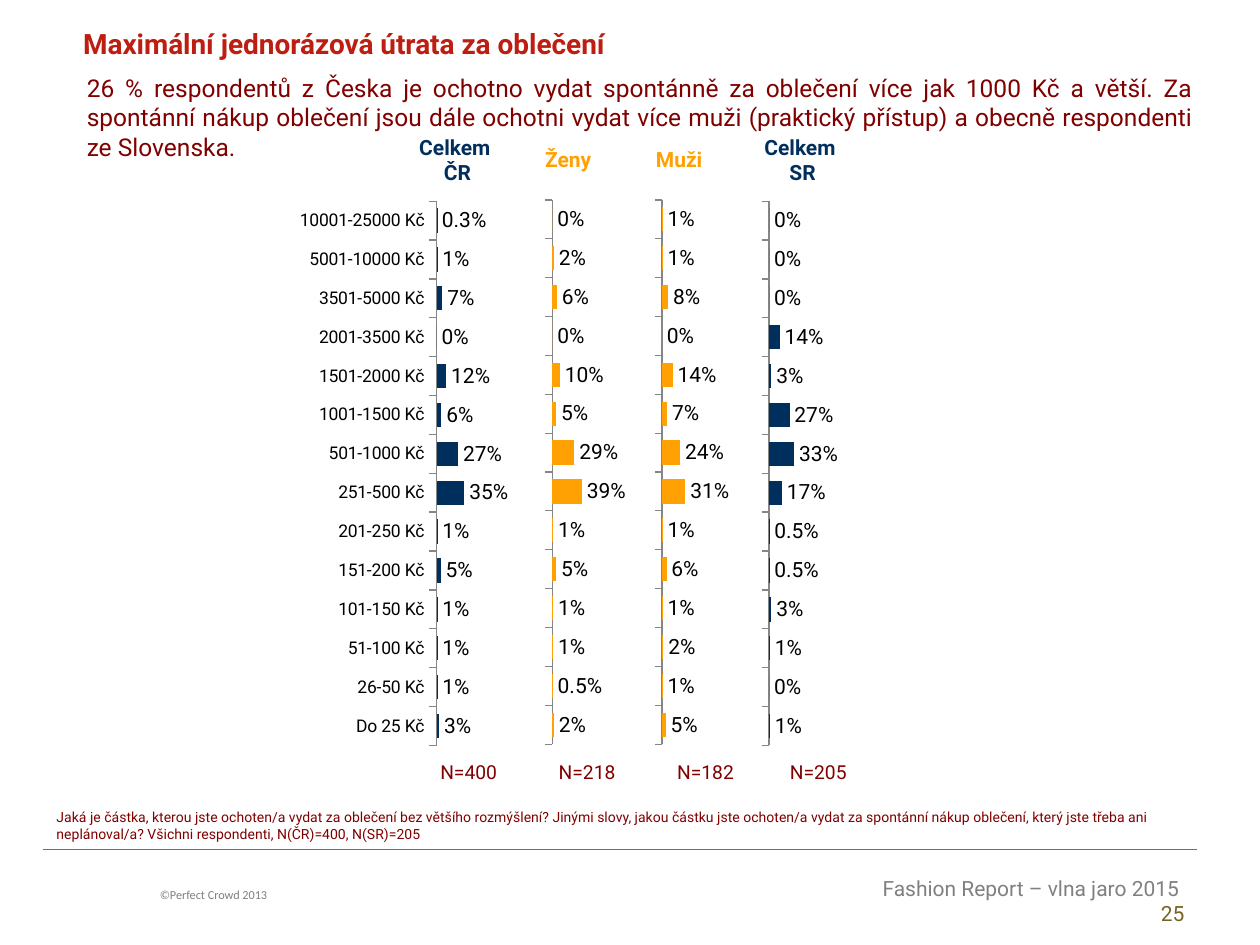
import dataclasses

import lxml.etree
import pptx
import pptx.chart.data
import pptx.dml.color
import pptx.enum.chart
import pptx.enum.shapes
import pptx.enum.text
import pptx.oxml
import pptx.oxml.ns
import pptx.util

Inches = pptx.util.Inches
Align = pptx.enum.text.PP_ALIGN
Anchor = pptx.enum.text.MSO_ANCHOR
qn = pptx.oxml.ns.qn


@dataclasses.dataclass(frozen=True)
class Theme:
    font: str = "Roboto"
    copyright_font: str = "Calibri"
    navy: str = "002F5E"
    orange: str = "FFA102"
    maroon: str = "800000"
    red: str = "BE1E11"
    rule: str = "BF4C48"
    axis: str = "868686"
    grey: str = "808080"
    olive: str = "756522"
    black: str = "000000"
    title_size: float = 16
    lead_size: float = 14
    base_size: float = 12
    count_size: float = 11
    category_size: float = 10
    note_size: float = 8
    copyright_size: float = 7


def apply(target, values):
    for name, value in values.items():
        setattr(target, name, value)


def rgb(color):
    return pptx.dml.color.RGBColor.from_string(color)


class SurveySlide:
    def __init__(self, presentation, theme):
        self.theme = theme
        self.slide = presentation.slides.add_slide(presentation.slide_layouts[5])
        self.shapes = self.slide.shapes

    def style(self, font, size, color, bold=False, name=None):
        apply(font, {"name": name or self.theme.font, "size": pptx.util.Pt(size), "bold": bold})
        font.color.rgb = rgb(color)

    def fill_frame(self, frame, text, size, color, align=Align.LEFT, **font):
        apply(frame, {"text": text, "word_wrap": True, "vertical_anchor": Anchor.TOP,
                      "auto_size": pptx.enum.text.MSO_AUTO_SIZE.NONE})
        for paragraph in frame.paragraphs:
            paragraph.alignment = align
            for run in paragraph.runs:
                self.style(run.font, size, color, **font)

    def title(self, box, text):
        headline = self.shapes.title
        apply(headline, dict(zip(("left", "top", "width", "height"), map(Inches, box))))
        self.fill_frame(headline.text_frame, text, self.theme.title_size, self.theme.red, bold=True)

    def text(self, box, text, size, color, **options):
        frame = self.shapes.add_textbox(*map(Inches, box)).text_frame
        self.fill_frame(frame, text, size, color, **options)
        return frame

    def rule(self, left, right, y):
        line = self.shapes.add_connector(pptx.enum.shapes.MSO_CONNECTOR.STRAIGHT,
                                         Inches(left), Inches(y), Inches(right), Inches(y))
        line.line.color.rgb = rgb(self.theme.rule)
        line.line.width = pptx.util.Pt(0.75)
        lxml.etree.SubElement(line._element.spPr, qn("a:effectLst"))

    def row(self, box, widths, entries, size, bold=False):
        """Add a one-row table; entries are (text, color) pairs."""
        table = self.shapes.add_table(1, len(entries), *map(Inches, box)).table
        apply(table, {"first_row": False, "horz_banding": False})
        table.rows[0].height = Inches(box[3])
        for column, width, cell, (text, color) in zip(table.columns, widths, table.rows[0].cells, entries):
            column.width = Inches(width)
            cell.fill.background()
            apply(cell, {"text": text, "vertical_anchor": Anchor.MIDDLE, "margin_left": Inches(0.01),
                         "margin_right": Inches(0.01), "margin_top": Inches(0.01), "margin_bottom": 0})
            for paragraph in cell.text_frame.paragraphs:
                paragraph.alignment = Align.CENTER
                self.style(paragraph.runs[0].font, size, color, bold)

    def bars(self, box, plot_box, categories, values, color, show_categories=False):
        data = pptx.chart.data.CategoryChartData()
        data.categories = categories
        data.add_series("Series 1", values)
        chart = self.shapes.add_chart(pptx.enum.chart.XL_CHART_TYPE.BAR_CLUSTERED,
                                      *map(Inches, box), data).chart
        apply(chart, {"has_title": False, "has_legend": False})
        self.style(chart.font, self.theme.base_size, self.theme.black)
        self.place_plot(chart, plot_box)

        apply(chart.value_axis, {"minimum_scale": 0, "maximum_scale": 100,
                                 "has_major_gridlines": False, "visible": False})
        axis = chart.category_axis
        marks, labels = pptx.enum.chart.XL_TICK_MARK, pptx.enum.chart.XL_TICK_LABEL_POSITION
        apply(axis, {"major_tick_mark": marks.OUTSIDE, "minor_tick_mark": marks.NONE,
                     "has_major_gridlines": False,
                     "tick_label_position": labels.LOW if show_categories else labels.NONE})
        axis.format.line.color.rgb = rgb(self.theme.axis)
        self.style(axis.tick_labels.font, self.theme.category_size, self.theme.black)

        plot = chart.plots[0]
        apply(plot, {"gap_width": 60, "vary_by_categories": False, "has_data_labels": True})
        apply(plot.data_labels, {"show_value": True, "number_format_is_linked": False,
                                 "number_format": '[=0]0"%";[<1]0.0"%";#,##0"%"',
                                 "position": pptx.enum.chart.XL_LABEL_POSITION.OUTSIDE_END})
        self.style(plot.data_labels.font, self.theme.base_size, self.theme.black)
        fill = plot.series[0].format.fill
        fill.solid()
        fill.fore_color.rgb = rgb(color)

    def place_plot(self, chart, plot_box):
        """Fix the inner plot area as fractions of the chart and clear the background."""
        chart_node = chart.element.find(qn("c:chart"))
        background = pptx.oxml.parse_xml(
            f'<c:spPr {pptx.oxml.ns.nsdecls("c", "a")}><a:noFill/><a:ln><a:noFill/></a:ln></c:spPr>')
        chart_node.addnext(background)
        area = chart_node.find(qn("c:plotArea"))
        for old in area.findall(qn("c:layout")):
            area.remove(old)
        layout = lxml.etree.Element(qn("c:layout"))
        manual = lxml.etree.SubElement(layout, qn("c:manualLayout"))
        settings = {"layoutTarget": "inner", "xMode": "edge", "yMode": "edge",
                    **dict(zip("xywh", plot_box))}
        for tag, value in settings.items():
            lxml.etree.SubElement(manual, qn(f"c:{tag}")).set("val", str(value))
        area.insert(0, layout)


AMOUNTS = [f"{amount} Kč" for amount in (
    "Do 25", "26-50", "51-100", "101-150", "151-200", "201-250", "251-500", "501-1000",
    "1001-1500", "1501-2000", "2001-3500", "3501-5000", "5001-10000", "10001-25000")]
SPENDING = {
    "slovakia": [1, 0, 1, 3, 0.5, 0.5, 17, 33, 27, 3, 14, 0, 0, 0],
    "men": [5, 1, 2, 1, 6, 1, 31, 24, 7, 14, 0, 8, 1, 1],
    "women": [2, 0.5, 1, 1, 5, 1, 39, 29, 5, 10, 0, 6, 2, 0],
    "czechia": [3, 1, 1, 1, 5, 1, 35, 27, 6, 12, 0, 7, 1, 0.3],
}


def main():
    theme = Theme()
    presentation = pptx.Presentation()
    apply(presentation, {"slide_width": Inches(10), "slide_height": Inches(7.5)})
    page = SurveySlide(presentation, theme)

    page.rule(0.34, 9.5, 6.74)
    page.text((1.17, 6.99, 2.91, 0.22), "©Perfect Crowd 2013", theme.copyright_size, theme.grey,
              name=theme.copyright_font)
    footer = page.text((5.79, 6.9, 3.71, 0.5), "Fashion Report – vlna jaro 2015 \v25",
                       theme.base_size, theme.grey, align=Align.RIGHT)
    footer.paragraphs[0].runs[-1].font.color.rgb = rgb(theme.olive)

    numbers = [str(number) for number in range(1, len(AMOUNTS) + 1)]
    groups = [("slovakia", 4.66, 1.27, 0.62, theme.navy),
              ("men", 3.81, 1.26, 0.62, theme.orange),
              ("women", 2.94, 1.26, 0.62, theme.orange)]
    for group, left, top, plot_left, color in groups:
        page.bars((left, top, 2.33, 5.03), (plot_left, 0.065, 0.258, 0.859),
                  numbers, SPENDING[group], color)
    page.bars((-0.3, 1.27, 4.68, 5.03), (0.805, 0.065, 0.134, 0.859),
              AMOUNTS, SPENDING["czechia"], theme.navy, show_categories=True)

    page.title((0.56, 0.16, 7.51, 0.37), "Maximální jednorázová útrata za oblečení")
    page.text((0.35, 6.37, 9.06, 0.37),
              "Jaká je částka, kterou jste ochoten/a vydat za oblečení bez většího rozmýšlení? "
              "Jinými slovy, jakou částku jste ochoten/a vydat za spontánní nákup oblečení, který "
              "jste třeba ani neplánoval/a? Všichni respondenti, N(ČR)=400, N(SR)=205",
              theme.note_size, theme.maroon)
    page.text((0.59, 0.53, 8.98, 0.81),
              "26 % respondentů z Česka je ochotno vydat spontánně za oblečení více jak 1000 Kč a "
              "větší. Za spontánní nákup oblečení jsou dále ochotni vydat více muži (praktický "
              "přístup) a obecně respondenti ze Slovenska.",
              theme.lead_size, theme.maroon, align=Align.JUSTIFY)

    page.row((3.19, 1.05, 3.72, 0.44), (0.88, 0.88, 0.88, 1.08),
             [("Celkem  ČR", theme.navy), ("Ženy", theme.orange),
              ("Muži", theme.orange), ("Celkem \nSR", theme.navy)], theme.base_size, bold=True)
    page.row((3.25, 6.02, 3.67, 0.21), (0.94, 0.94, 0.94, 0.85),
             [(f"N={count}", theme.maroon) for count in (400, 218, 182, 205)], theme.count_size)

    presentation.save("out.pptx")


if __name__ == "__main__":
    main()
